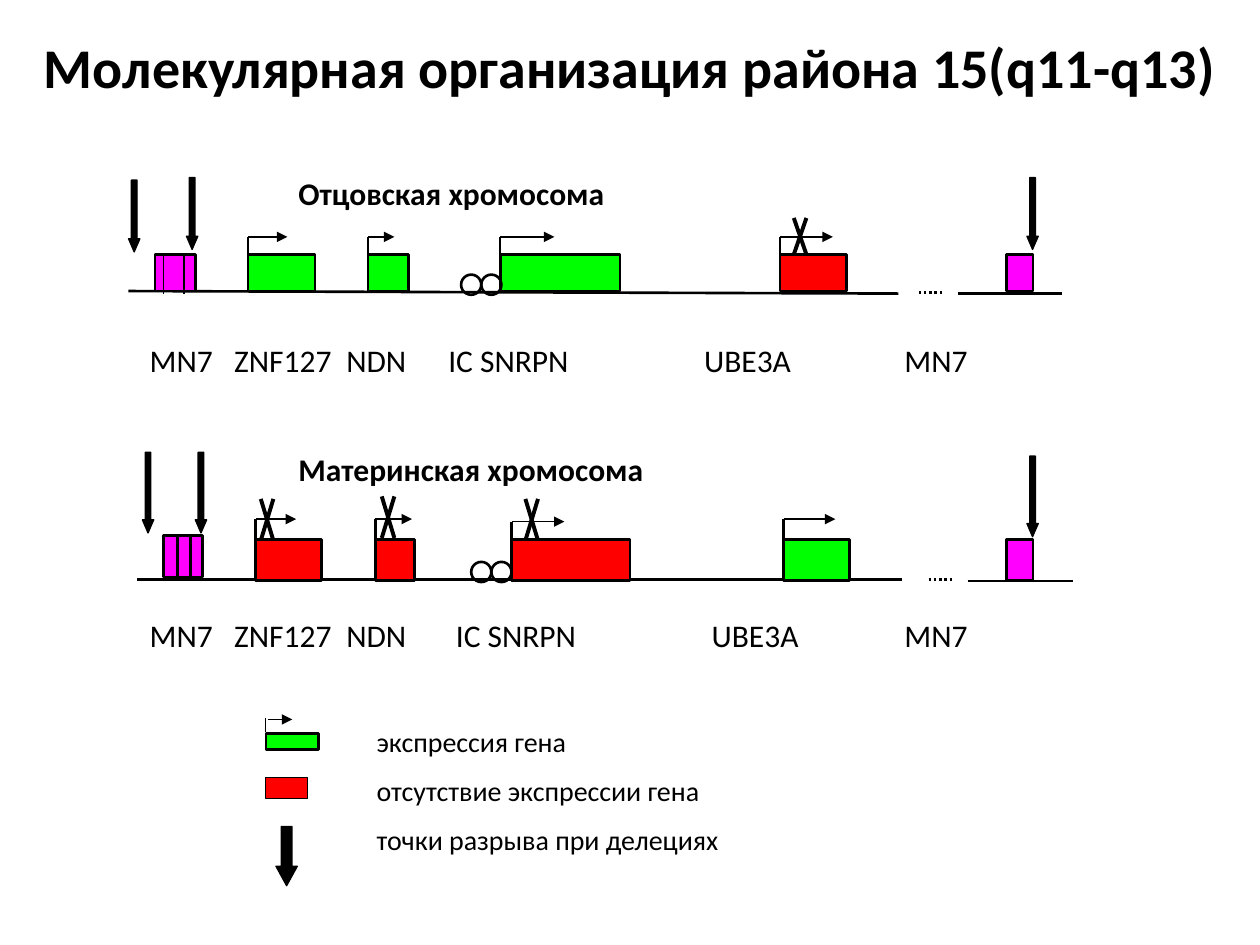
from pptx import Presentation
from pptx import util as u
from pptx.dml.color import RGBColor
from pptx.enum import dml, shapes, text
from pptx.oxml.ns import qn
from lxml import etree

COLOURS = {"ink": "000000", "active": "00FF00", "silent": "FF0000", "repeat": "FF00FF"}
RECT, OVAL, ARROW = (shapes.MSO_SHAPE.RECTANGLE, shapes.MSO_SHAPE.OVAL,
                     shapes.MSO_SHAPE.DOWN_ARROW)

deck = Presentation()
deck.slide_width, deck.slide_height = u.Inches(10), u.Inches(7.5)
slide = deck.slides.add_slide(deck.slide_layouts[6])
# All lengths count cells of a grid with 100 columns and 75 rows.
COL, ROW = deck.slide_width / 100, deck.slide_height / 75


def add_block(parent, kind, x, y, w, h, colour=None, weight=1.5):
    """Outlined preset shape; without a colour it stays hollow."""
    block = parent.shapes.add_shape(kind, int(x * COL), int(y * ROW), int(w * COL), int(h * ROW))
    block.shadow.inherit = False
    if colour:
        block.fill.solid()
        block.fill.fore_color.rgb = RGBColor.from_string(COLOURS[colour])
    else:
        block.fill.background()
    block.line.color.rgb = RGBColor.from_string(COLOURS["ink"])
    block.line.width = u.Pt(weight)
    return block


def add_line(parent, x1, y1, x2, y2, weight=1.5, arrow=False, dotted=False):
    line = parent.shapes.add_connector(shapes.MSO_CONNECTOR.STRAIGHT, int(x1 * COL),
                                       int(y1 * ROW), int(x2 * COL), int(y2 * ROW))
    line.line.color.rgb = RGBColor.from_string(COLOURS["ink"])
    line.line.width = u.Pt(weight)
    if dotted:
        line.line.dash_style = dml.MSO_LINE.ROUND_DOT
    if arrow:
        etree.SubElement(line.line._get_or_add_ln(), qn("a:tailEnd"), type="triangle")
    etree.SubElement(line._element.spPr, qn("a:effectLst"))


# Genes: left, width, arrow level, arrow end, arrow weight, stem foot,
# and the left and top of the cross that marks a silent gene.
chromosomes = [
    dict(title=("Отцовская хромосома", 13.3, 26.6), top=20.2, height=2.9,
         axis=[(10.2, 23.1, 71.3, 23.3), (76, 23.3, 84.3, 23.3)], dots=(72.9, 23.2),
         cluster=(12.3, 20.2, 3.2), bands=[13, 14.6], band_weight=0.75,
         band_foot=23.3, imprint=(36.6, 21.8), cross_height=2.9,
         breaks=[(10.2, 14.3), (14.8, 14.1), (81.5, 14.1)], break_height=5.7,
         genes=[(19.7, 5.3, 18.8, 22.8, 0.75, 21.7, None),
                (29.2, 3.2, 18.8, 31.3, 0.75, 21.7, None),
                (39.7, 9.5, 18.8, 44, 1, 20.2, None),
                (61.9, 5.3, 18.8, 66.1, 0.75, 21.7, (63, 17.3))],
         labels_top=26.6, stops=[6.7, 15.6, 23.7, 44, 59.9]),
    dict(title=("Материнская хромосома", 35.2, 31.3), top=42.8, height=3.3,
         axis=[(10.9, 46, 71.6, 46), (76.8, 46.1, 85.2, 46.1)], dots=(73.7, 46),
         cluster=(13, 42.5, 3.1), bands=[14.1, 15.1], band_weight=1.5,
         band_foot=46, imprint=(37.4, 44.6), cross_height=3.3,
         breaks=[(11.3, 35.9), (15.5, 35.9), (81.5, 36.2)], break_height=6.4,
         genes=[(20.3, 5.2, 41.2, 23.5, 0.75, 44.4, (20.7, 39.6)),
                (29.8, 3.1, 41.2, 32.7, 0.75, 44.4, (30.3, 39.4)),
                (40.6, 9.4, 41.4, 44.8, 1, 43, (41.7, 39.6)),
                (62.2, 5.2, 41.2, 66.3, 0.75, 44.2, None)],
         labels_top=48.4, stops=[6.7, 15.6, 24.3, 44.6, 59.9]),
]

# Captions: parent, wording, left, top, width, height, size, bold, tab stops.
captions = [(slide, "Молекулярная организация района 15(q11-q13)",
             0, 2.1, 100, 6.4, 32, True, [])]
gene_names = "\t".join(["MN7", "ZNF127", "NDN", "IC SNRPN", "UBE3A", "MN7"])

for c in chromosomes:
    strand = slide.shapes.add_group_shape()
    top, height = c["top"], c["height"]
    for ends in c["axis"]:
        add_line(strand, *ends)
    dots_x, dots_y = c["dots"]
    add_line(strand, dots_x, dots_y, dots_x + 2, dots_y, dotted=True)

    cluster_x, cluster_y, cluster_w = c["cluster"]
    add_block(strand, RECT, cluster_x, cluster_y, cluster_w, height, "repeat")
    add_block(strand, RECT, 79.9, top, 2.1, height, "repeat")
    for band in c["bands"]:
        add_line(strand, band, cluster_y, band, c["band_foot"], c["band_weight"])

    for x, width, level, arrow_end, weight, foot, cross in c["genes"]:
        add_line(strand, x, foot, x, level)
        add_block(strand, RECT, x, top, width, height, "silent" if cross else "active")
        add_line(strand, x, level, arrow_end, level, weight, arrow=True)
        if cross:
            left, head = cross
            for start, end in [(left, left + 1), (left + 1, left)]:
                add_line(strand, start, head, end, head + c["cross_height"], 2.25)

    imprint_x, imprint_y = c["imprint"]
    for i in range(2):
        add_block(strand, OVAL, imprint_x + 1.6 * i, imprint_y, 1.6, 1.6)
    for x, y in c["breaks"]:
        breakpoint_arrow = add_block(strand, ARROW, x, y, 0.9, c["break_height"], "ink", 0.75)
        breakpoint_arrow.adjustments[1] = 1.16

    title, title_top, title_width = c["title"]
    captions += [(strand, title, 22.7, title_top, title_width, 4, 18, True, []),
                 (slide, gene_names, 10.9, c["labels_top"], 85, 4, 18, False, c["stops"])]

# Legend
sample = slide.shapes.add_group_shape()
add_block(sample, RECT, 21.1, 58.2, 4.2, 1.3, "active")
add_line(sample, 21.1, 58.1, 21.1, 57, 0.75)
add_line(sample, 21.3, 57.1, 23.2, 57.1, 0.75, arrow=True)
add_block(slide, RECT, 21.1, 61.7, 3.3, 1.7, "silent", 0.75)
legend_arrow = add_block(slide, ARROW, 21.9, 65.6, 1.7, 4.7, "ink", 0.75)
legend_arrow.adjustments[1] = 0.91
meanings = ["экспрессия гена", "отсутствие экспрессии гена", "точки разрыва при делециях"]
for i, meaning in enumerate(meanings):
    captions.append((slide, meaning, 28.9, 57 + 3.9 * i, 29.2, 3.7, 16, False, []))

for parent, wording, x, y, w, h, size, bold, stops in captions:
    caption = parent.shapes.add_textbox(int(x * COL), int(y * ROW), int(w * COL), int(h * ROW))
    frame = caption.text_frame
    frame.word_wrap = True
    frame.auto_size = text.MSO_AUTO_SIZE.SHAPE_TO_FIT_TEXT
    paragraph = frame.paragraphs[0]
    paragraph.alignment = text.PP_ALIGN.CENTER if size == 32 else text.PP_ALIGN.LEFT
    if stops:
        tabs = etree.SubElement(paragraph._p.get_or_add_pPr(), qn("a:tabLst"))
        for stop in stops:
            etree.SubElement(tabs, qn("a:tab"), pos=str(int(stop * COL)), algn="l")
    run = paragraph.add_run()
    run.text = wording
    run.font.name, run.font.size, run.font.bold = "Calibri", u.Pt(size), bold
    run.font.color.rgb = RGBColor.from_string(COLOURS["ink"])

deck.save("out.pptx")
